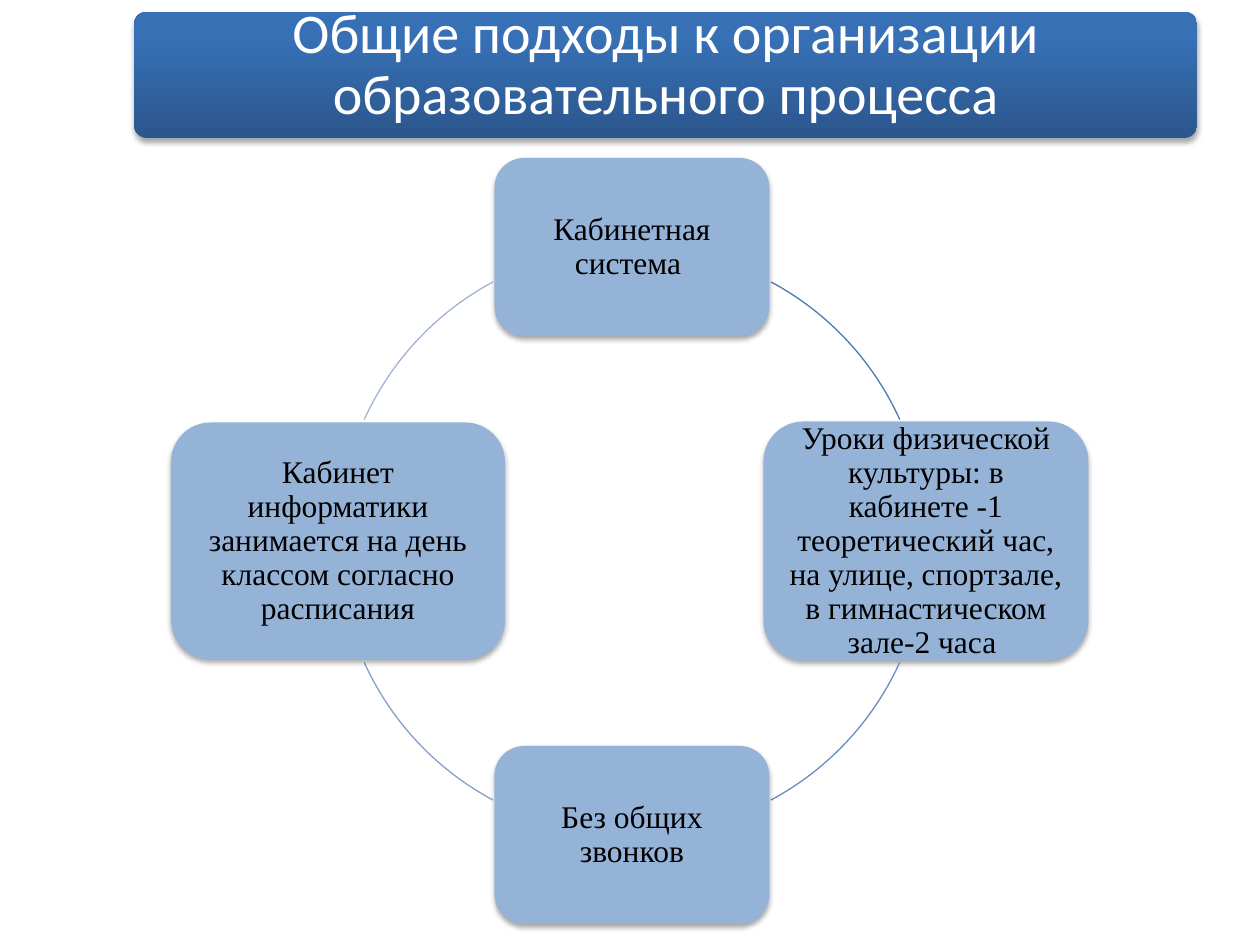
from copy import deepcopy
from dataclasses import dataclass
from math import cos, radians, sin

from pptx import Presentation
from pptx.dml.color import RGBColor
from pptx.enum.shapes import MSO_SHAPE
from pptx.enum.text import MSO_ANCHOR, MSO_AUTO_SIZE, PP_ALIGN
from pptx.oxml import parse_xml
from pptx.oxml.ns import nsdecls, qn
from pptx.util import Pt

EMU_PER_PX = 914400 / 126
ROUNDED = MSO_SHAPE.ROUNDED_RECTANGLE
ARC = MSO_SHAPE.ARC
MIDDLE = MSO_ANCHOR.MIDDLE
CENTER = PP_ALIGN.CENTER
NO_FIT = MSO_AUTO_SIZE.NONE
TITLE_ONLY = 5


@dataclass(frozen=True)
class Theme:
    """Colours, fonts and type sizes of the slide."""
    node: str = "95B3D7"
    node_text: str = "000000"
    title_text: str = "FFFFFF"
    banner: tuple = ((0, "2B568C"), (0.8, "3770B5"), (1, "3570B8"))
    arcs: tuple = ("4B7BB5", "698DBE", "85A0C9", "A1B4D4")
    node_font: str = "Times New Roman"
    title_font: str = "Calibri"
    node_size: int = 18
    title_size: int = 32


THEME = Theme()
CENTER_X, CENTER_Y, RADIUS = 632, 541, 294
ARC_START, ARC_END = 24.4, 61.8
NODES = (
    ("Кабинетная система ", 275, 178),
    ("Уроки физической культуры: в кабинете -1 теоретический час, "
     "на улице, спортзале, в гимнастическом зале-2 часа ", 325, 239),
    ("Без общих звонков", 275, 178),
    ("Кабинет информатики занимается на день классом согласно расписания",
     334, 237),
)


def px(length):
    """Convert pixels to EMU."""
    return round(length * EMU_PER_PX)


def add_shadow(shape):
    """Give a shape a soft shadow just below it."""
    shape.shadow.inherit = False
    effects = shape._element.spPr.find(qn("a:effectLst"))
    effects.append(parse_xml(
        f'<a:outerShdw {nsdecls("a")} blurRad="{Pt(3.1)}" dist="{Pt(1.8)}" '
        'dir="5400000" rotWithShape="0"><a:srgbClr val="000000">'
        '<a:alpha val="35000"/></a:srgbClr></a:outerShdw>'))


def write_text(shape, text, font, size, color, inset_x, inset_y):
    """Write one centred paragraph into a shape."""
    frame = shape.text_frame
    frame.text = text
    frame.word_wrap = True
    frame.auto_size = NO_FIT
    frame.vertical_anchor = MIDDLE
    frame.margin_left = frame.margin_right = px(inset_x)
    frame.margin_top = frame.margin_bottom = px(inset_y)
    para = frame.paragraphs[0]
    para.alignment = CENTER
    para.line_spacing = 0.9
    span = para.runs[0]
    span.font.name = font
    span.font.size = Pt(size)
    span.font.color.rgb = RGBColor.from_string(color)


def add_shape(page, kind, left, top, width, height):
    """Add a preset shape placed in pixels."""
    return page.shapes.add_shape(kind, px(left), px(top), px(width), px(height))


def add_node(page, text, angle, width, height):
    """Add a rounded box centred on the circle at an angle."""
    x = CENTER_X + RADIUS * cos(radians(angle))
    y = CENTER_Y + RADIUS * sin(radians(angle))
    box = add_shape(page, ROUNDED, x - width / 2, y - height / 2, width, height)
    box.fill.solid()
    box.fill.fore_color.rgb = RGBColor.from_string(THEME.node)
    box.line.fill.background()
    add_shadow(box)
    write_text(box, text, THEME.node_font, THEME.node_size,
               THEME.node_text, 9, 9)


def add_arc(page, start, end, color):
    """Add a piece of the circle between two angles."""
    arc = add_shape(page, ARC, CENTER_X - RADIUS, CENTER_Y - RADIUS,
                    2 * RADIUS, 2 * RADIUS)
    arc.adjustments[0] = start * 0.6
    arc.adjustments[1] = end * 0.6
    arc.shadow.inherit = False
    arc.fill.background()
    arc.line.color.rgb = RGBColor.from_string(color)
    arc.line.width = Pt(0.75)


def add_banner(page):
    """Add the gradient banner behind the title."""
    banner = add_shape(page, ROUNDED, 134, 12, 1063, 126)
    banner.adjustments[0] = 0.1
    banner.line.fill.background()
    banner.fill.gradient()
    banner.fill.gradient_angle = 90
    stops = banner._element.spPr.find(qn("a:gradFill")).find(qn("a:gsLst"))
    stops.append(deepcopy(stops[-1]))
    for stop, (position, color) in zip(banner.fill.gradient_stops, THEME.banner):
        stop.position = position
        stop.color.rgb = RGBColor.from_string(color)
    add_shadow(banner)


def place_title(page, text):
    """Place the title on top of the banner."""
    title = page.shapes.title
    title.left, title.top = px(140), px(15)
    title.width, title.height = px(1052), px(102)
    write_text(title, text, THEME.title_font, THEME.title_size,
               THEME.title_text, 10, 8)
    page.shapes._spTree.append(title._element)


def main():
    """Build and save the slide."""
    deck = Presentation()
    deck.slide_width, deck.slide_height = px(1260), px(945)
    page = deck.slides.add_slide(deck.slide_layouts[TITLE_ONLY])
    spans = [(360 - ARC_END, 360 - ARC_START), (ARC_START, ARC_END),
             (180 - ARC_END, 180 - ARC_START),
             (180 + ARC_START, 180 + ARC_END)]
    for index, (text, width, height) in enumerate(NODES):
        add_node(page, text, 90 * index - 90, width, height)
        add_arc(page, *spans[index], THEME.arcs[index])
    add_banner(page)
    place_title(page, "Общие подходы к организации образовательного процесса")
    deck.save("out.pptx")


if __name__ == "__main__":
    main()
